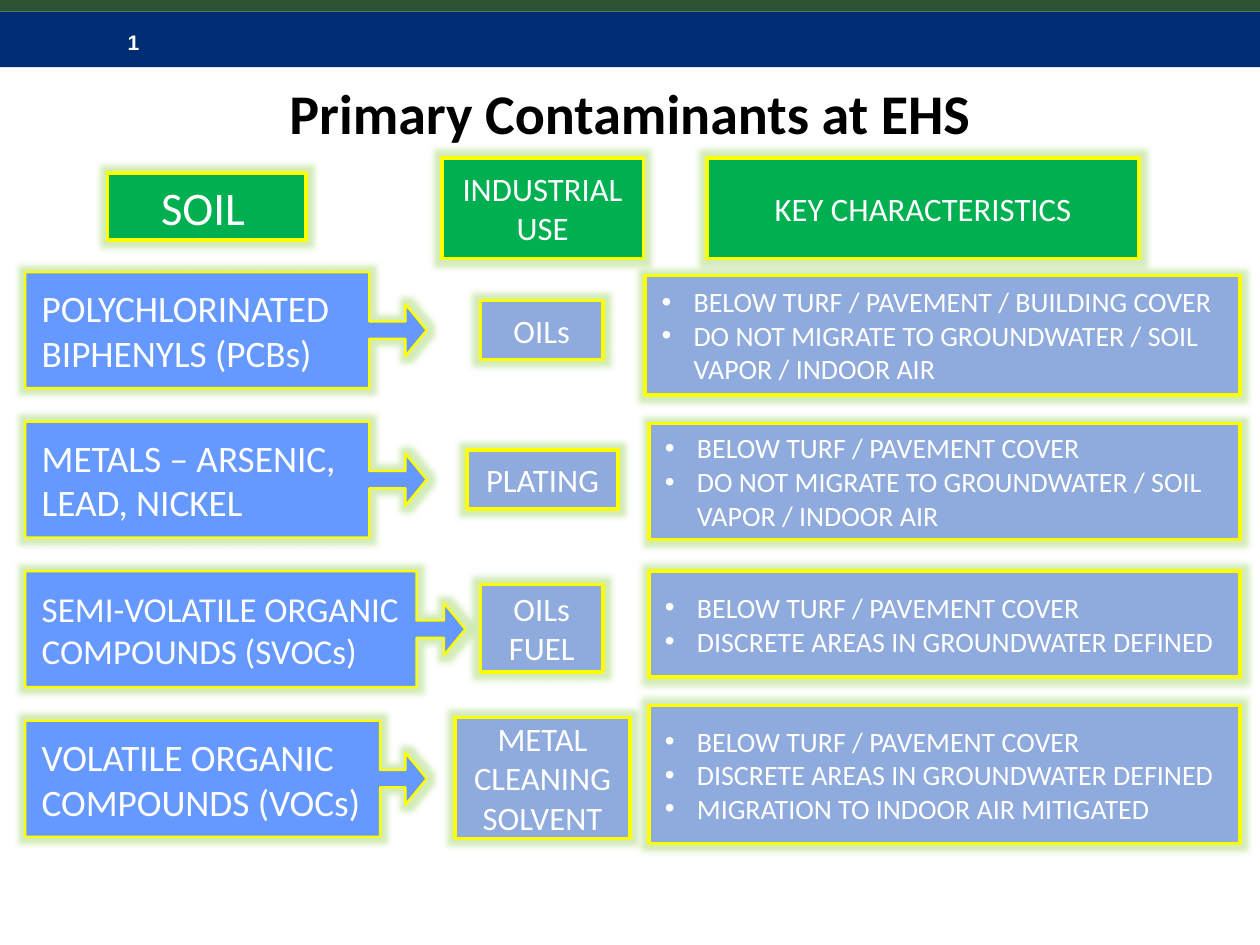
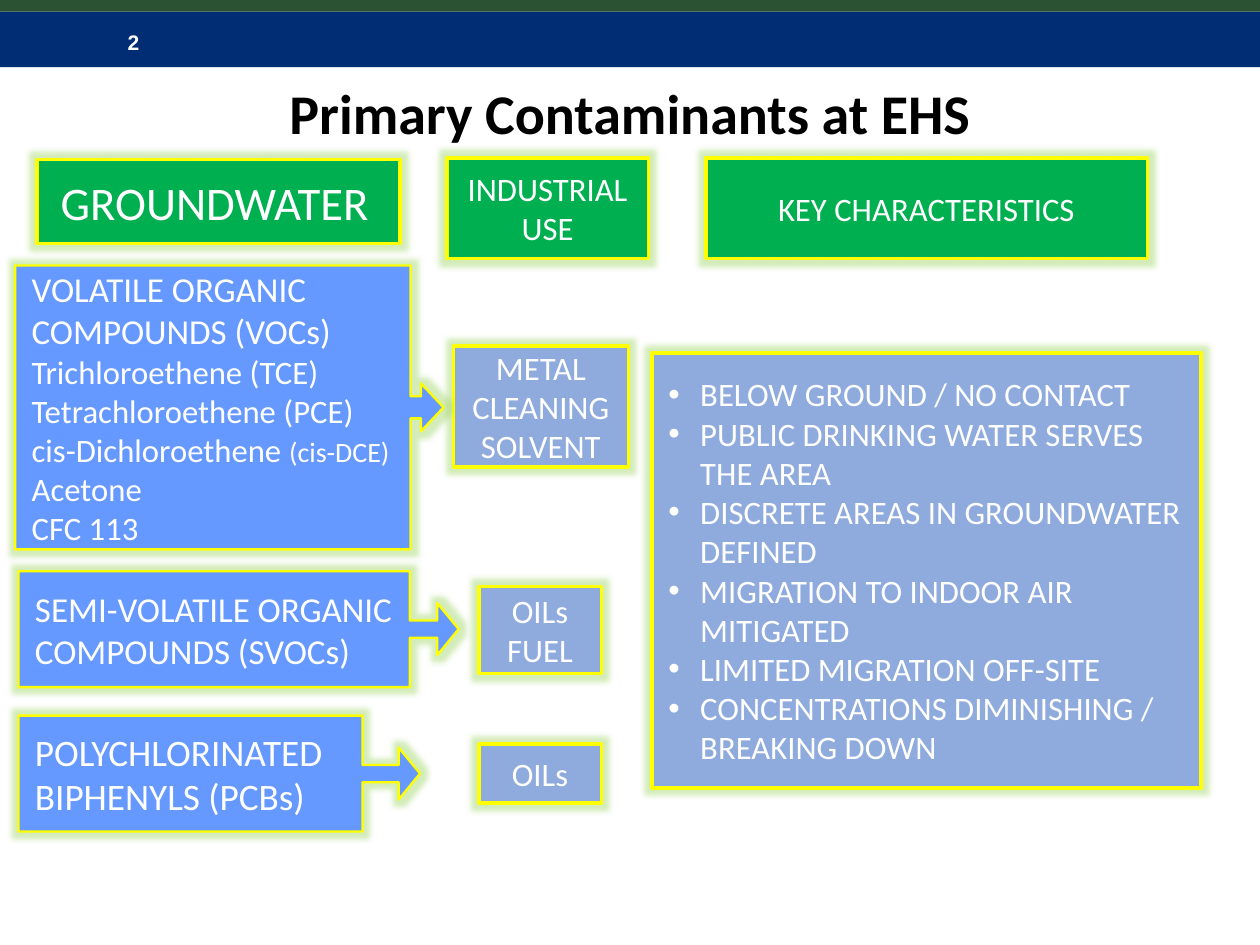
from lxml import etree
from pptx import Presentation
from pptx.dml.color import RGBColor
from pptx.enum import shapes, text
from pptx.oxml.ns import qn
from pptx.util import Inches, Pt

HUES = {
    "navy": "002D73", "moss": "2C5234", "head": "00B050", "use": "8FAADC",
    "soil": "6699FF", "edge": "FFFF00", "glow": "92D050",
    "white": "FFFFFF", "black": "000000",
}
KIND = shapes.MSO_SHAPE
ALIGN = text.PP_ALIGN
FRAME = (-0.004, 0.001, 0.489, 0.001, 1.001, 0.001)

OILS = ["OILs"]
FUEL = ["OILs", "FUEL"]
METAL = ["METAL", "CLEANING", "SOLVENT"]
PCBS = "POLYCHLORINATED BIPHENYLS (PCBs)"
SVOCS = "SEMI-VOLATILE ORGANIC COMPOUNDS (SVOCs)"
VOCS = "VOLATILE ORGANIC COMPOUNDS (VOCs)"
COVER = "BELOW TURF / PAVEMENT COVER"
STAYS = "DO NOT MIGRATE TO GROUNDWATER / SOIL VAPOR / INDOOR AIR"
AREAS = "DISCRETE AREAS IN GROUNDWATER DEFINED"
INDOOR = "MIGRATION TO INDOOR AIR MITIGATED"


def color(name):
    return RGBColor.from_string(HUES[name])


def add_run(para, words, size, hue="white", bold=False, face="Calibri"):
    run = para.add_run()
    run.text = words
    font = run.font
    font.name, font.size, font.bold = face, Pt(size), bold
    font.color.rgb = color(hue)


def add_box(slide, kind, at, fill):
    box = slide.shapes.add_shape(kind, *map(Inches, at))
    box.shadow.inherit = False
    box.fill.solid()
    box.fill.fore_color.rgb = color(fill)
    box.line.fill.background()
    return box


def add_edge(box, width):
    box.line.color.rgb = color("edge")
    box.line.width = Pt(width)
    effects = box.element.spPr.find(qn("a:effectLst"))
    glow = etree.SubElement(effects, qn("a:glow"), rad=str(Pt(5)))
    tint = etree.SubElement(glow, qn("a:srgbClr"), val=HUES["glow"])
    etree.SubElement(tint, qn("a:alpha"), val="40000")


def shape_by(box, ratios):
    for i, ratio in enumerate(ratios):
        box.adjustments[i] = ratio


def add_bullet(para):
    props = para._p.get_or_add_pPr()
    props.set("marL", str(Inches(0.19)))
    props.set("indent", str(-Inches(0.19)))
    etree.SubElement(props, qn("a:buFont"), typeface="Arial")
    etree.SubElement(props, qn("a:buChar"), char="•")


def add_lines(box, lines, size, align, bullet=False):
    frame = box.text_frame
    frame.word_wrap = True
    frame.vertical_anchor = text.MSO_ANCHOR.MIDDLE
    for i, line in enumerate(lines):
        para = frame.add_paragraph() if i else frame.paragraphs[0]
        if bullet:
            add_bullet(para)
        para.alignment = align
        runs = [(line, size)] if isinstance(line, str) else line
        for words, points in runs:
            add_run(para, words, points)


def add_label(slide, at, lines, fill="use", size=14):
    box = add_box(slide, KIND.LINE_CALLOUT_2, at, fill)
    shape_by(box, FRAME)
    add_edge(box, 1.5)
    add_lines(box, lines, size, ALIGN.CENTER)


def add_list(slide, at, lines, size=12):
    box = add_box(slide, KIND.LINE_CALLOUT_2, at, "use")
    shape_by(box, FRAME)
    add_edge(box, 1.5)
    add_lines(box, lines, size, ALIGN.LEFT, True)


def add_source(slide, at, lines, body, size=16, arrow=(0.148, 0.224, 0.184)):
    box = add_box(slide, KIND.RIGHT_ARROW_CALLOUT, at, "soil")
    shape_by(box, (*arrow, body))
    add_edge(box, 1)
    add_lines(box, lines, size, ALIGN.LEFT)


def add_page(deck, number):
    slide = deck.slides.add_slide(deck.slide_layouts[5])
    band = add_box(slide, KIND.RECTANGLE, (0, 0.07, 7.5, 0.33), "navy")
    band.text_frame.margin_left = Inches(0.76)
    band.text_frame.margin_top = Inches(0.07)
    band.text_frame.margin_bottom = Inches(0.04)
    para = band.text_frame.paragraphs[0]
    para.alignment = ALIGN.LEFT
    add_run(para, str(number), 9, bold=True, face="Arial")
    add_box(slide, KIND.RECTANGLE, (0, 0, 7.5, 0.07), "moss")
    title = slide.shapes.title
    title.left, title.top, title.width, title.height = map(
        Inches, (0.23, 0.41, 7.04, 0.51))
    frame = title.text_frame
    frame.margin_left = frame.margin_right = 0
    frame.margin_top = frame.margin_bottom = 0
    frame.auto_size = text.MSO_AUTO_SIZE.NONE
    frame.vertical_anchor = text.MSO_ANCHOR.MIDDLE
    para = frame.paragraphs[0]
    para.alignment = ALIGN.CENTER
    add_run(para, "Primary Contaminants at EHS", 24, "black", True)
    return slide


def add_heads(slide, topic, topic_at, use_left, key_left, key_width):
    add_label(slide, (key_left, 0.94, key_width, 0.6),
              ["KEY CHARACTERISTICS"], "head")
    add_label(slide, topic_at, [[(topic, 20), (" ", 14)]], "head")
    add_label(slide, (use_left, 0.94, 1.2, 0.6), ["INDUSTRIAL USE"], "head")


def add_soil(deck):
    slide = add_page(deck, 1)
    add_heads(slide, "SOIL", (0.64, 1.03, 1.18, 0.4), 2.63, 4.21, 2.57)
    rows = [
        (1.62, PCBS, 2.39, 0.857, 16, (2.86, 1.79, 0.73, 0.35), OILS,
         (3.84, 1.64, 3.54, 0.71),
         ["BELOW TURF / PAVEMENT / BUILDING COVER", STAYS]),
        (2.51, "METALS – ARSENIC, LEAD, NICKEL", 2.39, 0.857, 16,
         (2.78, 2.68, 0.9, 0.35), ["PLATING"],
         (3.86, 2.52, 3.52, 0.69), [COVER, STAYS]),
        (3.4, SVOCS, 2.62, 0.889, 15, (2.86, 3.48, 0.73, 0.52), FUEL,
         (3.86, 3.4, 3.52, 0.63), [COVER, AREAS]),
        (4.29, VOCS, 2.39, 0.884, 16, (2.71, 4.27, 1.04, 0.72), METAL,
         (3.86, 4.2, 3.52, 0.82), [COVER, AREAS, INDOOR]),
    ]
    for top, name, width, body, size, use_at, use, key_at, keys in rows:
        add_label(slide, use_at, use)
        add_source(slide, (0.15, top, width, 0.69), [name], body, size)
        add_list(slide, key_at, keys)


def add_water(deck):
    slide = add_page(deck, 2)
    add_heads(slide, "GROUNDWATER", (0.22, 0.95, 2.16, 0.5), 2.66, 4.2, 2.63)
    add_label(slide, (2.85, 4.43, 0.73, 0.35), OILS)
    add_source(slide, (0.11, 4.26, 2.39, 0.69), [PCBS], 0.857)
    add_label(slide, (2.85, 3.49, 0.73, 0.52), FUEL)
    add_source(slide, (0.11, 3.4, 2.62, 0.69), [SVOCS], 0.889, 15)
    add_label(slide, (2.7, 2.06, 1.04, 0.72), METAL)
    add_list(slide, (3.88, 2.1, 3.27, 2.59), [
        "BELOW GROUND / NO CONTACT",
        "PUBLIC DRINKING WATER SERVES THE AREA",
        AREAS,
        INDOOR,
        "LIMITED MIGRATION OFF-SITE",
        "CONCENTRATIONS DIMINISHING / BREAKING DOWN",
    ], 14)
    add_source(slide, (0.09, 1.58, 2.55, 1.69), [
        [(VOCS, 15)],
        "Trichloroethene (TCE)",
        "Tetrachloroethene (PCE)",
        [("cis-Dichloroethene ", 14), ("(cis-DCE)", 12)],
        "Acetone",
        "CFC 113",
    ], 0.923, 14, (0.078, 0.084, 0.079))


def main():
    deck = Presentation()
    deck.slide_width = Inches(7.5)
    deck.slide_height = deck.slide_width * 3 // 4
    add_soil(deck)
    add_water(deck)
    deck.save("out.pptx")


if __name__ == "__main__":
    main()
